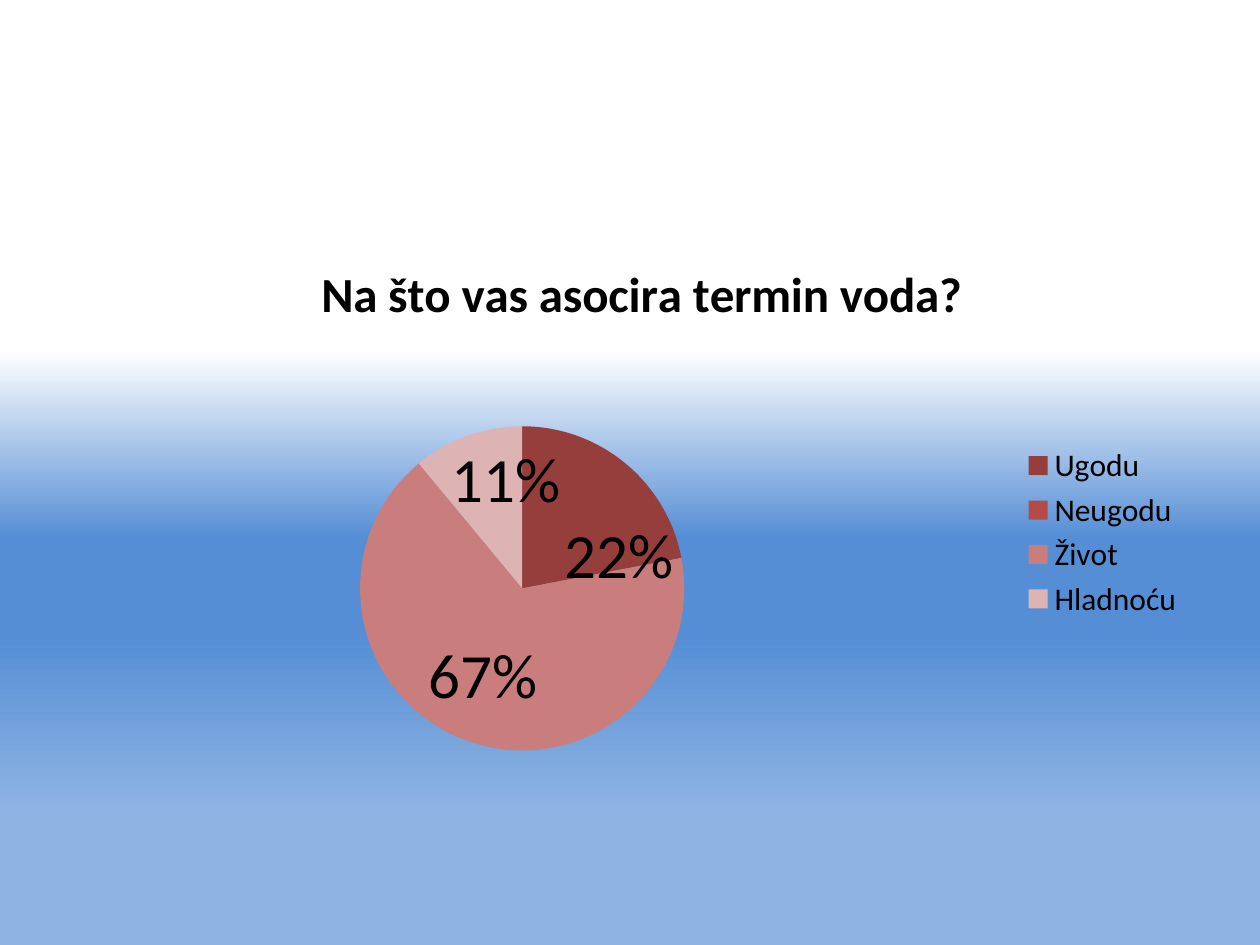
from lxml.etree import SubElement
from pptx import Presentation
from pptx.chart.data import CategoryChartData
from pptx.dml.color import RGBColor
from pptx.enum.chart import XL_CHART_TYPE, XL_LABEL_POSITION, XL_LEGEND_POSITION
from pptx.oxml.ns import qn
from pptx.util import Inches, Pt

FONT = "Calibri"
BLACK = RGBColor(0x00, 0x00, 0x00)
WHITE = RGBColor(0xFF, 0xFF, 0xFF)
BLUE = RGBColor(0x55, 0x8E, 0xD5)
LIGHT_BLUE = RGBColor(0x8E, 0xB4, 0xE3)
SKY_STOPS = [(37, WHITE), (57, BLUE), (67, BLUE), (86, LIGHT_BLUE)]

QUESTION = "Na što vas asocira termin voda?"
# answer, percentage, slice colour, label shift as shares of the chart's size
ANSWERS = [
    ("Ugodu", 22, RGBColor(0x95, 0x3E, 0x3C), (0.04, 0.05)),
    ("Neugodu", 0, RGBColor(0xB5, 0x4B, 0x48), None),
    ("Život", 67, RGBColor(0xC9, 0x7E, 0x7D), (-0.01, 0.02)),
    ("Hladnoću", 11, RGBColor(0xDD, 0xB4, 0xB3), (0.01, -0.05)),
]


def set_background(s, stops):
    fill = s.background.fill
    fill.gradient()
    fill.gradient_angle = 270
    gs_list = s.background._cSld.find(".//" + qn("a:gsLst"))
    for gs in list(gs_list):
        gs_list.remove(gs)
    for percent, color in stops:
        gs = SubElement(gs_list, qn("a:gs"), pos=str(percent * 1000))
        SubElement(gs, qn("a:srgbClr"), val=str(color))


def set_font(font, size, bold=False):
    font.name = FONT
    font.size = Pt(size)
    font.bold = bold
    font.color.rgb = BLACK


def set_layout(parent, index, **values):
    """Place a chart part by hand; index is the layout's place in its parent."""
    for old in parent.findall(qn("c:layout")):
        parent.remove(old)
    layout = SubElement(parent, qn("c:layout"))
    parent.insert(index, layout)
    manual = SubElement(layout, qn("c:manualLayout"))
    for tag, value in values.items():
        SubElement(manual, qn("c:" + tag), val=str(value))


def add_title(chart):
    chart.has_title = True
    title = chart.chart_title
    p = title.text_frame.paragraphs[0]
    p.text = QUESTION
    set_font(p.font, 28, bold=True)
    set_layout(title._element, 1, xMode="edge", yMode="edge", x=0.22, y=0.05)


def add_legend(chart):
    chart.has_legend = True
    chart.legend.position = XL_LEGEND_POSITION.RIGHT
    chart.legend.include_in_layout = False
    set_font(chart.legend.font, 18)


def label_slice(point, shift):
    label = point.data_label
    set_font(label.font, 36)
    label.position = XL_LABEL_POSITION.CENTER
    element = point._ser.dLbls.dLbl_lst[-1]
    element.find(qn("c:showVal")).set("val", "0")
    element.find(qn("c:showPercent")).set("val", "1")
    set_layout(element, 1, x=shift[0], y=shift[1])


def style_slices(series):
    labels = series.data_labels
    labels.show_value = False
    labels.show_percentage = False
    labels.number_format = "0%"
    labels.number_format_is_linked = False
    set_font(labels.font, 36)
    for i, (_, _, color, shift) in enumerate(ANSWERS):
        point = series.points[i]
        point.format.fill.solid()
        point.format.fill.fore_color.rgb = color
        if shift:
            label_slice(point, shift)


def add_pie(s):
    data = CategoryChartData()
    data.categories = [answer[0] for answer in ANSWERS]
    data.add_series(QUESTION, [answer[1] for answer in ANSWERS])
    frame = s.shapes.add_chart(XL_CHART_TYPE.PIE, Inches(0.5), Inches(1.75),
                               Inches(9), Inches(4.95), data)
    chart = frame.chart
    set_font(chart.font, 18)
    add_title(chart)
    add_legend(chart)
    plot = chart.plots[0]
    plot.vary_by_categories = True
    style_slices(plot.series[0])
    plot_area = chart._chartSpace.chart.plotArea
    set_layout(plot_area, 0, layoutTarget="inner", xMode="edge", yMode="edge",
               x=0.26, y=0.33, w=0.29, h=0.52)


def main():
    prs = Presentation()
    prs.slide_width, prs.slide_height = Inches(10), Inches(7.5)
    s = prs.slides.add_slide(prs.slide_layouts[6])
    set_background(s, SKY_STOPS)
    add_pie(s)
    prs.save("out.pptx")


if __name__ == "__main__":
    main()
